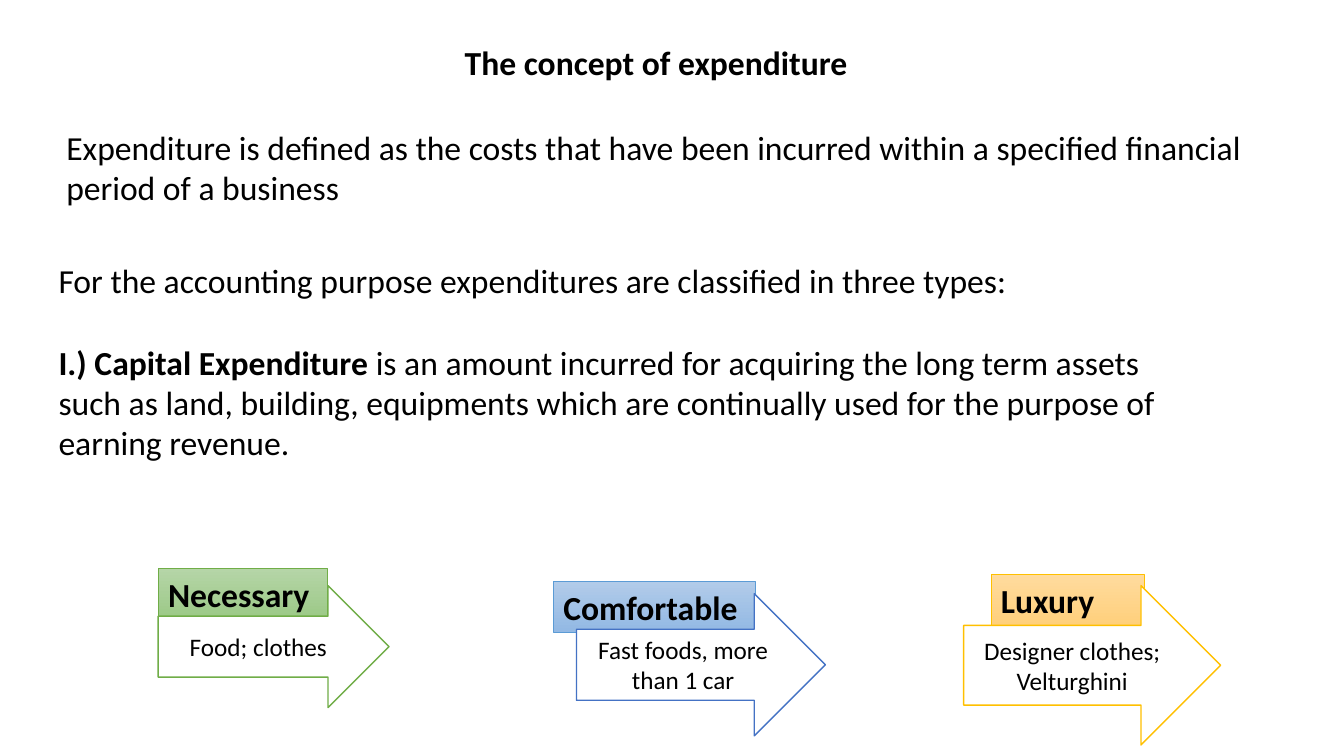
from pptx import Presentation
from pptx.dml.color import RGBColor
from pptx.enum.shapes import MSO_SHAPE
from pptx.enum.text import MSO_ANCHOR, MSO_AUTO_SIZE, PP_ALIGN
from pptx.oxml.xmlchemy import OxmlElement
from pptx.util import Pt

RECTANGLE, RIGHT_ARROW = MSO_SHAPE.RECTANGLE, MSO_SHAPE.RIGHT_ARROW
TOP, MIDDLE = MSO_ANCHOR.TOP, MSO_ANCHOR.MIDDLE
LEFT, CENTER = PP_ALIGN.LEFT, PP_ALIGN.CENTER
NO_AUTOFIT = MSO_AUTO_SIZE.NONE

COLORS = {
    "text": "000000", "paper": "FFFFFF",
    "green": "70AD47", "green_light": "B5D5A7", "green_dark": "9CC987",
    "blue": "5B9BD5", "blue_light": "B1CBE9", "blue_dark": "93B9E4",
    "blue_arrow": "4472C4",
    "gold": "FFC000", "gold_light": "FFDB9E", "gold_dark": "FFD07C",
}
TEXT_SIZE, EXAMPLE_SIZE = 24, 18
BLANK_LINE = 29.3
TAG_HEIGHT = 36

TITLE = "The concept of expenditure"
DEFINITION = ("Expenditure is defined as the costs that have been incurred within "
              "a specified financial period of a business")
CLASSIFICATION = "For the accounting purpose expenditures are classified in three types:"
CAPITAL_TERM = "I.) Capital Expenditure "
CAPITAL_MEANING = ("is an amount incurred for acquiring the long term assets such as land, "
                   "building, equipments which are continually used for the purpose of "
                   "earning revenue.")

# Arrow box, then the tag's offset from it and the tag's width
CATEGORIES = [
    {"name": "Necessary", "examples": "Food; clothes",
     "box": (113, 418.3, 164.9, 87.1), "tag": (0, -12.2, 121),
     "tone": "green", "arrow_line": "green"},
    {"name": "Comfortable", "examples": "Fast foods, more than 1 car",
     "box": (411.8, 424.1, 177.8, 101.5), "tag": (-16.5, -8.7, 144),
     "tone": "blue", "arrow_line": "blue_arrow"},
    {"name": "Luxury", "examples": "Designer clothes; Velturghini",
     "box": (688.3, 418.3, 183.6, 113.8), "tag": (19.5, -7.9, 109.4),
     "tone": "gold", "arrow_line": "gold"},
]


def color(name):
    return RGBColor.from_string(COLORS[name])


def place(shape, box):
    for name, length in zip(("left", "top", "width", "height"), box):
        setattr(shape, name, Pt(length))


def format_frame(shape, anchor=TOP):
    frame = shape.text_frame
    values = {"word_wrap": True, "auto_size": NO_AUTOFIT, "vertical_anchor": anchor}
    for name, value in values.items():
        setattr(frame, name, value)
    return frame


def write(paragraph, runs, size=TEXT_SIZE, alignment=LEFT, space_before=0):
    """Fill a paragraph with (text, bold) runs."""
    paragraph.alignment = alignment
    paragraph.space_before = Pt(space_before)
    for text, bold in runs:
        run = paragraph.add_run()
        run.text = text
        for name, value in {"name": "Calibri", "size": Pt(size), "bold": bold}.items():
            setattr(run.font, name, value)
        run.font.color.rgb = color("text")


def remove_bullet(paragraph):
    properties = paragraph._p.get_or_add_pPr()
    properties.set("marL", "0")
    properties.set("indent", "0")
    properties.append(OxmlElement("a:buNone"))


def add_title(slide, box):
    title = slide.shapes.title
    place(title, box)
    write(format_frame(title).paragraphs[0], [(TITLE, True)])


def add_definition(slide, box):
    definition = slide.shapes.add_textbox(*map(Pt, box))
    write(format_frame(definition).paragraphs[0], [(DEFINITION, False)])


def add_classification(slide, box):
    body = slide.placeholders[1]
    place(body, box)
    frame = format_frame(body)
    introduction, capital = frame.paragraphs[0], frame.add_paragraph()
    write(introduction, [(CLASSIFICATION, False)])
    write(capital, [(CAPITAL_TERM, True), (CAPITAL_MEANING, False)],
          space_before=BLANK_LINE)
    for paragraph in (introduction, capital):
        remove_bullet(paragraph)


def add_outlined_shape(slide, kind, box, line_color, line_width):
    shape = slide.shapes.add_shape(kind, *map(Pt, box))
    shape.shadow.inherit = False
    shape.line.color.rgb = color(line_color)
    shape.line.width = Pt(line_width)
    return shape


def add_category(slide, category):
    """Add a gradient tag with the arrow of examples over its lower edge."""
    left, top, _, _ = category["box"]
    offset_x, offset_y, tag_width = category["tag"]
    tone = category["tone"]

    tag = add_outlined_shape(slide, RECTANGLE,
                             (left + offset_x, top + offset_y, tag_width, TAG_HEIGHT),
                             tone, 0.5)
    tag.fill.gradient()
    tag.fill.gradient_angle = 270
    for stop, shade in zip(tag.fill.gradient_stops, ("light", "dark")):
        stop.color.rgb = color(f"{tone}_{shade}")
    write(format_frame(tag).paragraphs[0], [(category["name"], True)])

    arrow = add_outlined_shape(slide, RIGHT_ARROW, category["box"],
                               category["arrow_line"], 1)
    arrow.fill.solid()
    arrow.fill.fore_color.rgb = color("paper")
    write(format_frame(arrow, MIDDLE).paragraphs[0], [(category["examples"], False)],
          EXAMPLE_SIZE, CENTER)


def main():
    presentation = Presentation()
    presentation.slide_width, presentation.slide_height = Pt(960), Pt(540)
    slide = presentation.slides.add_slide(presentation.slide_layouts[1])
    add_title(slide, (324.7, 26.6, 345, 36))
    add_definition(slide, (40.3, 87.1, 880, 65.5))
    add_classification(slide, (34.6, 182.2, 823, 152.6))
    for category in CATEGORIES:
        add_category(slide, category)
    presentation.save("out.pptx")


if __name__ == "__main__":
    main()
